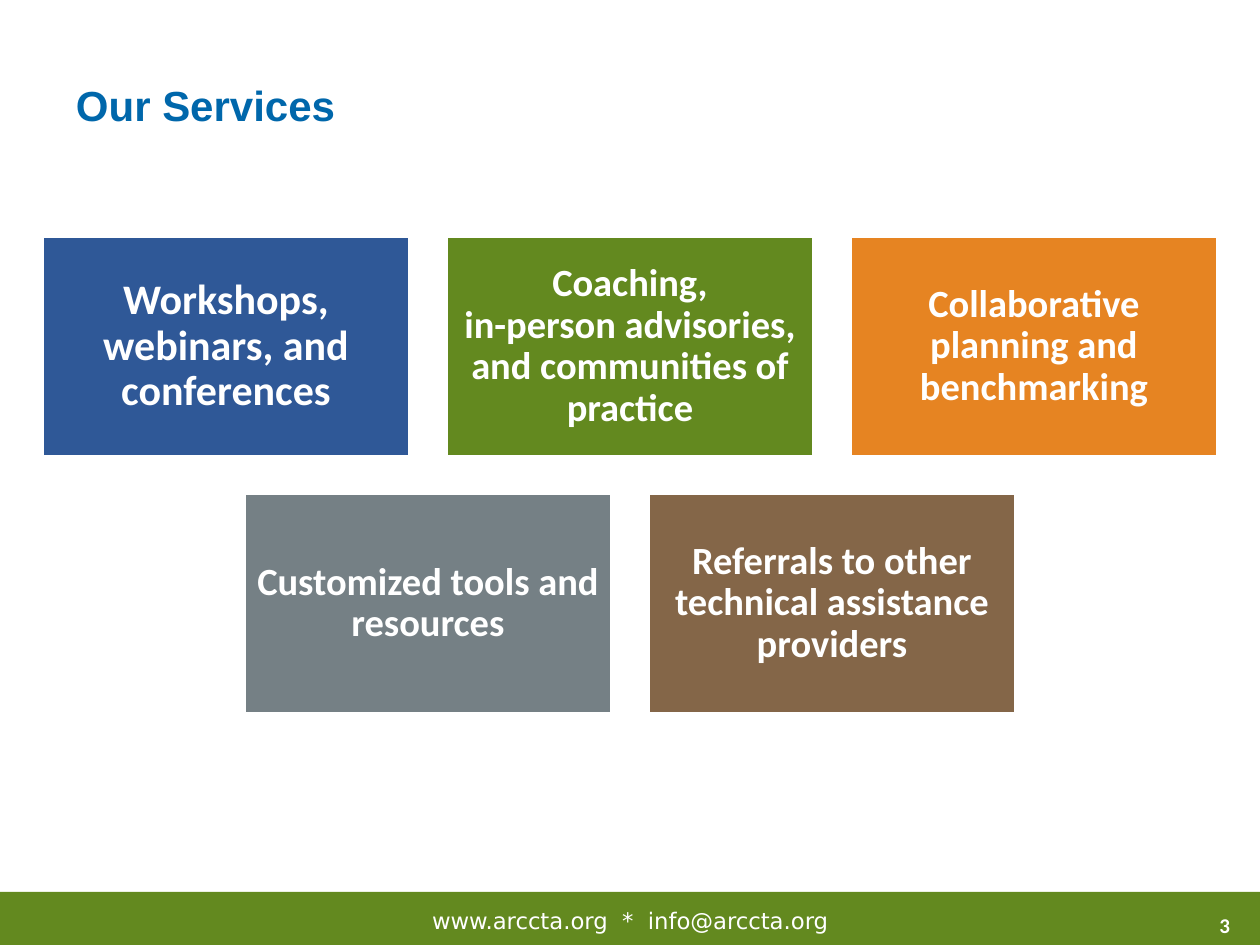
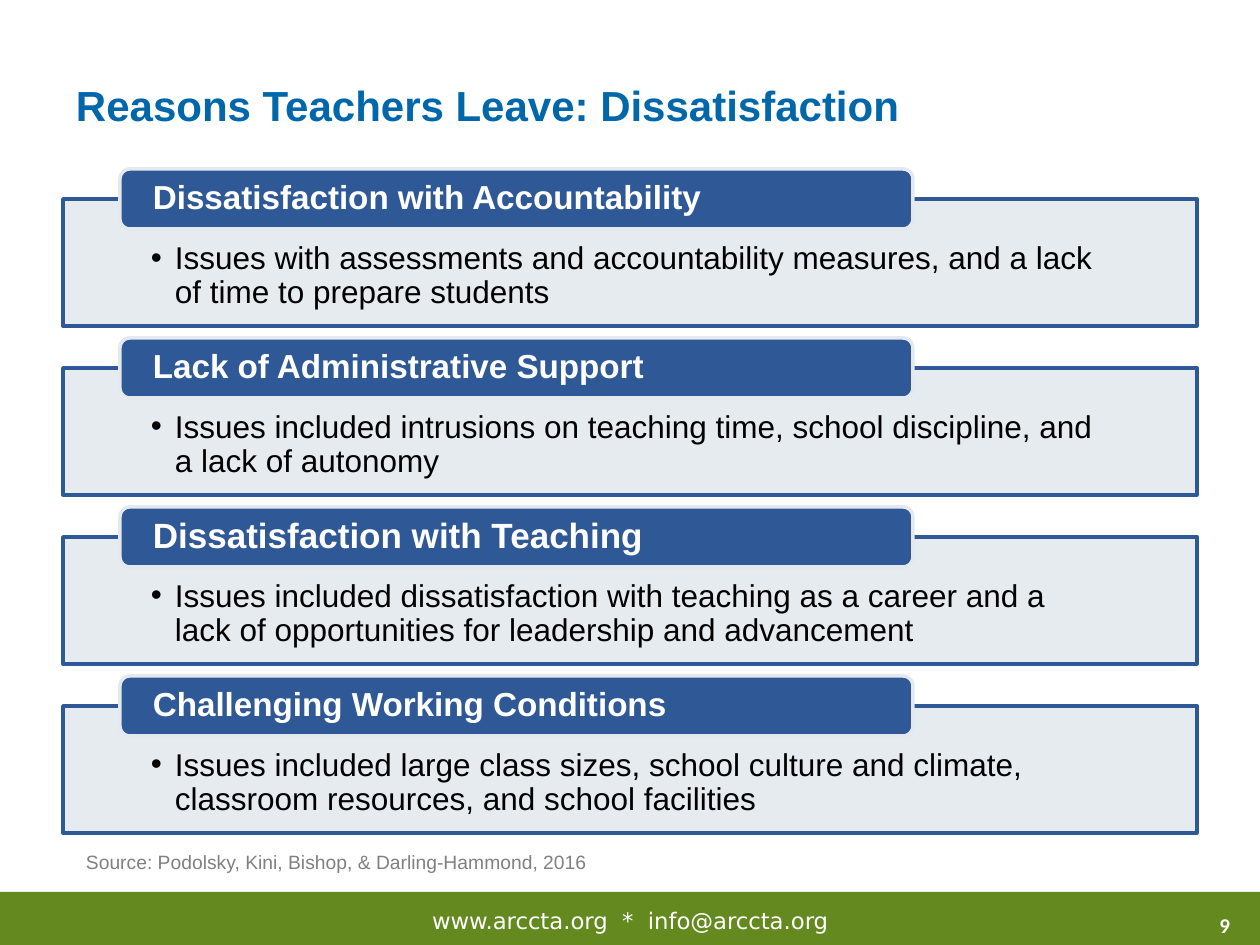
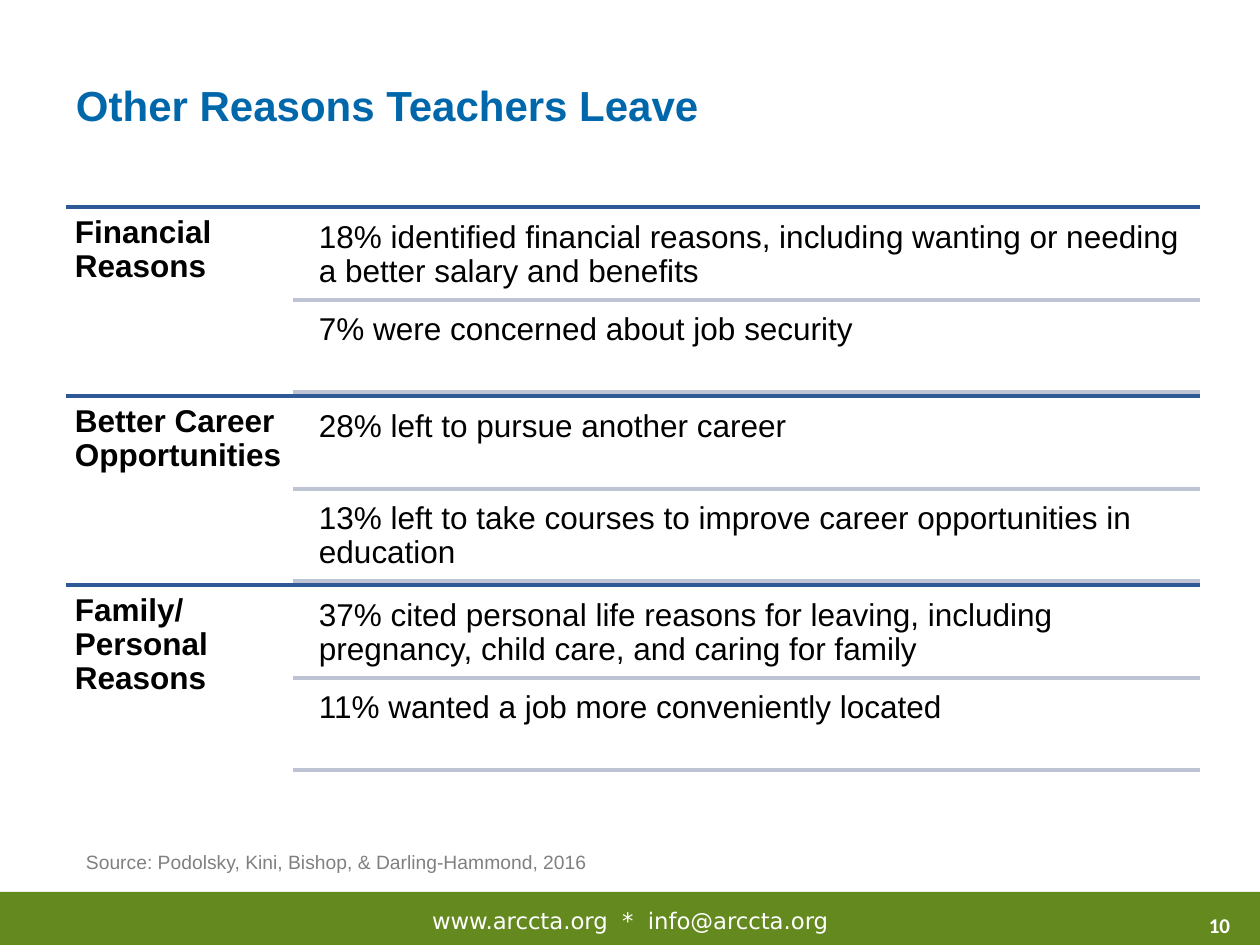
from lxml.etree import SubElement
from pptx import Presentation
from pptx.dml.color import RGBColor
from pptx.enum.shapes import MSO_CONNECTOR, MSO_SHAPE
from pptx.enum.text import MSO_ANCHOR as Anchor, PP_ALIGN as Align
from pptx.oxml.ns import qn
from pptx.util import Inches, Pt

PX = Inches(1) / 126
COLORS = {
    "white": "FFFFFF", "black": "000000", "title": "0067AB", "blue": "2F5897",
    "green": "63891F", "orange": "E68422", "slate": "758085", "brown": "846648",
    "panel": "E4E9EF", "rule": "BEC4D3", "source": "808080",
}
SOURCE = "Source: Podolsky, Kini, Bishop, & Darling-Hammond, 2016"

SERVICE_ROWS = [
    [("Workshops, webinars, and conferences", "blue", 24),
     ("Coaching,\vin-person advisories, and communities of practice", "green", 22),
     ("Collaborative planning and benchmarking", "orange", 22)],
    [("Customized tools and resources", "slate", 22),
     ("Referrals to other technical assistance providers", "brown", 22)],
]
DISSATISFACTIONS = [
    ("Dissatisfaction with Accountability", 19,
     "Issues with assessments and accountability measures, and a lack of time to prepare students"),
    ("Lack of Administrative Support", 19,
     "Issues included intrusions on teaching time, school discipline, and a lack of autonomy"),
    ("Dissatisfaction with Teaching", 20,
     "Issues included dissatisfaction with teaching as a career and a lack of opportunities "
     "for leadership and advancement"),
    ("Challenging Working Conditions", 19,
     "Issues included large class sizes, school culture and climate, classroom resources, "
     "and school facilities"),
]
OTHER_REASONS = [
    ("Financial Reasons",
     ["18% identified financial reasons, including wanting or needing a better salary and benefits",
      "7% were concerned about job security"]),
    ("Better Career Opportunities",
     ["28% left to pursue another career",
      "13% left to take courses to improve career opportunities in education"]),
    ("Family/ Personal Reasons",
     ["37% cited personal life reasons for leaving, including pregnancy, child care, "
      "and caring for family",
      "11% wanted a job more conveniently located"]),
]


def px(length):
    return round(length * PX)


def rgb(name):
    return RGBColor.from_string(COLORS[name])


class Deck:
    def __init__(self):
        self.show = Presentation()
        self.show.slide_width, self.show.slide_height = px(1260), px(945)
        self.page = None

    def add_page(self, title, number):
        self.page = self.show.slides.add_slide(self.show.slide_layouts[5])
        self.shape((0, 892, 1260, 53), "green")
        self.text((1150, 907, 93, 38), str(number), 12, "white", "Calibri", True, Align.RIGHT)
        self.text((63, 901, 1134, 40), "www.arccta.org  *  info@arccta.org", 13, "white",
                  "DejaVu Sans", align=Align.CENTER)
        heading = self.page.shapes.title
        heading.left, heading.top, heading.width, heading.height = map(px, (63, 38, 1134, 98))
        self.fill_text(heading, title, 24, "title", bold=True, anchor=Anchor.BOTTOM)

    def fill_text(self, box, text, size, color, font="Arial", bold=False, align=Align.LEFT,
                  anchor=Anchor.TOP, insets=(13, 6, 13, 6), spacing=None):
        frame = box.text_frame
        frame.text = text
        frame.word_wrap = True
        frame.vertical_anchor = anchor
        (frame.margin_left, frame.margin_top,
         frame.margin_right, frame.margin_bottom) = map(px, insets)
        para = frame.paragraphs[0]
        para.alignment = align
        para.line_spacing = spacing
        for span in para.runs:
            span.font.name = font
            span.font.size = Pt(size)
            span.font.bold = bold
            span.font.color.rgb = rgb(color)
        return para

    def text(self, area, *args, **style):
        box = self.page.shapes.add_textbox(*map(px, area))
        return self.fill_text(box, *args, **style)

    def shape(self, area, fill, line=None, kind=MSO_SHAPE.RECTANGLE, alpha=None):
        box = self.page.shapes.add_shape(kind, *map(px, area))
        box.shadow.inherit = False
        box.fill.solid()
        box.fill.fore_color.rgb = rgb(fill)
        if alpha:
            color = box._element.spPr.find(qn("a:solidFill"))[0]
            SubElement(color, qn("a:alpha"), val=str(alpha * 1000))
        if line:
            box.line.color.rgb = rgb(line)
            box.line.width = Pt(2)
        else:
            box.line.fill.background()
        return box

    def bullet(self, para, indent):
        properties = para._p.get_or_add_pPr()
        properties.set("marL", str(px(indent)))
        properties.set("indent", str(-px(indent)))
        SubElement(properties, qn("a:buFont"), typeface="Arial")
        SubElement(properties, qn("a:buChar"), char="•")

    def rule(self, left, right, top, color):
        line = self.page.shapes.add_connector(
            MSO_CONNECTOR.STRAIGHT, px(left), px(top), px(right), px(top))
        line.line.color.rgb = rgb(color)
        line.line.width = Pt(2)
        SubElement(line._element.spPr, qn("a:effectLst"))

    def source(self):
        self.text((73, 844, 620, 59), SOURCE, 11, "source")


def add_services(deck):
    deck.add_page("Our Services", 3)
    width, height, gap = 368, 221, 36
    for row, services in enumerate(SERVICE_ROWS):
        row_width = len(services) * (width + gap) - gap
        left, top = (1260 - row_width) // 2, 236 + row * (height + gap)
        for column, (service, color, size) in enumerate(services):
            card = deck.shape((left + column * (width + gap), top, width, height), color, "white")
            deck.fill_text(card, service, size, "white", "Calibri", True, Align.CENTER,
                           Anchor.MIDDLE, (11, 11, 11, 11), 0.9)


def add_dissatisfaction(deck):
    deck.add_page("Reasons Teachers Leave: Dissatisfaction", 9)
    for index, (reason, size, detail) in enumerate(DISSATISFACTIONS):
        top = 169 + index * 169
        panel = deck.shape((63, top + 30, 1134, 127), "panel", "blue", alpha=90)
        para = deck.fill_text(panel, detail, 18, "black", insets=(88, 43, 88, 18), spacing=0.9)
        deck.bullet(para, 24)
        header = deck.shape((120, top, 793, 60), "blue", "panel", MSO_SHAPE.ROUNDED_RECTANGLE)
        deck.fill_text(header, reason, size, "white", bold=True, anchor=Anchor.MIDDLE,
                       insets=(30, 0, 30, 0), spacing=0.9)
    deck.source()


def add_other_reasons(deck):
    deck.add_page("Other Reasons Teachers Leave", 10)
    style = {"insets": (9, 9, 9, 9), "spacing": 0.9}
    left, detail_left, right = 66, 293, 1200
    for index, (reason, details) in enumerate(OTHER_REASONS):
        top = 207 + index * 189
        deck.rule(left, right, top, "blue")
        deck.text((left, top, detail_left - left, 189), reason, 18, "black", bold=True, **style)
        for row, detail in enumerate(details):
            detail_top = top + 5 + row * 92
            deck.text((310, detail_top, 890, 88), detail, 18, "black", **style)
            deck.rule(detail_left, right, detail_top + 88, "rule")
    deck.source()


def main():
    deck = Deck()
    add_services(deck)
    add_dissatisfaction(deck)
    add_other_reasons(deck)
    deck.show.save("out.pptx")


if __name__ == "__main__":
    main()
